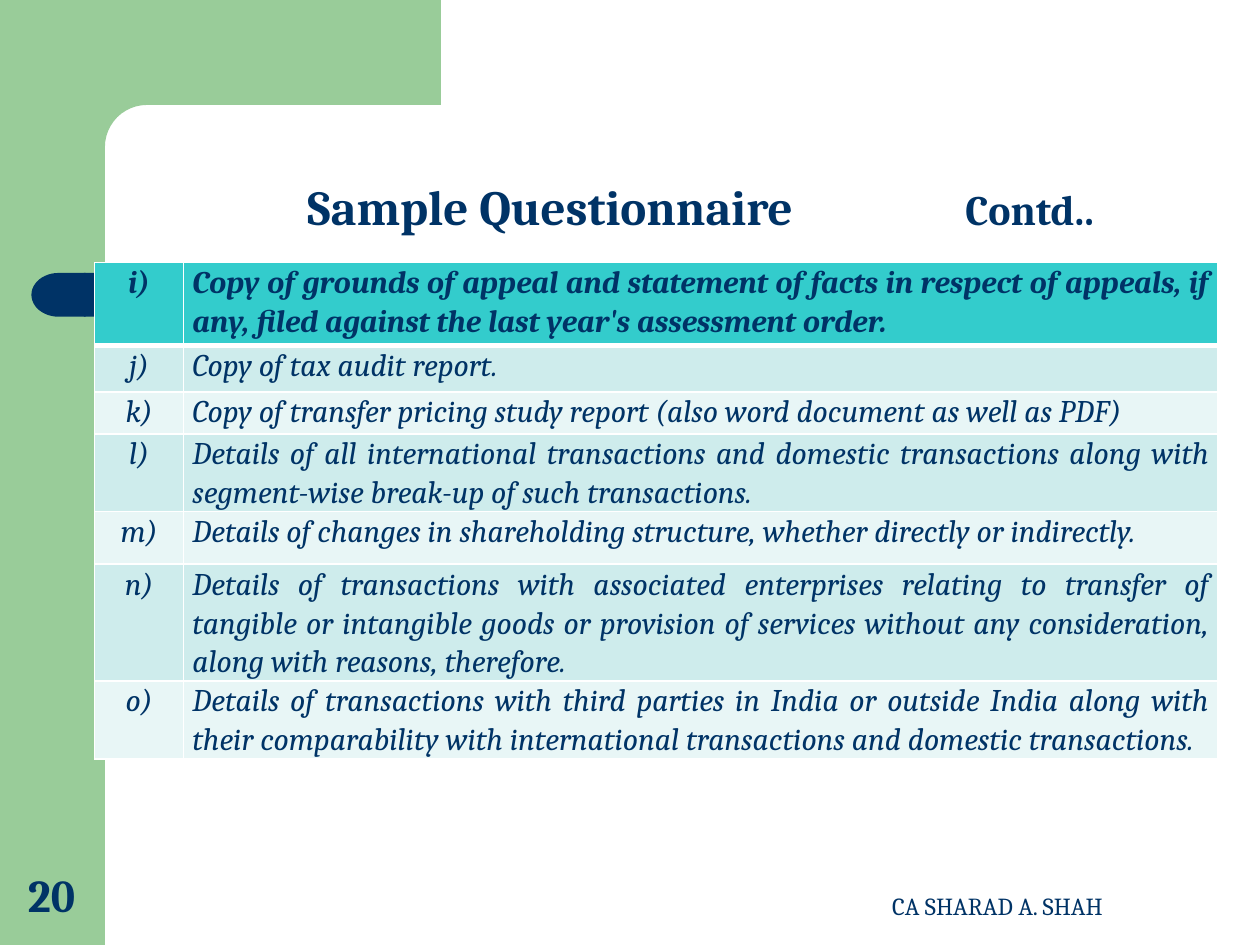
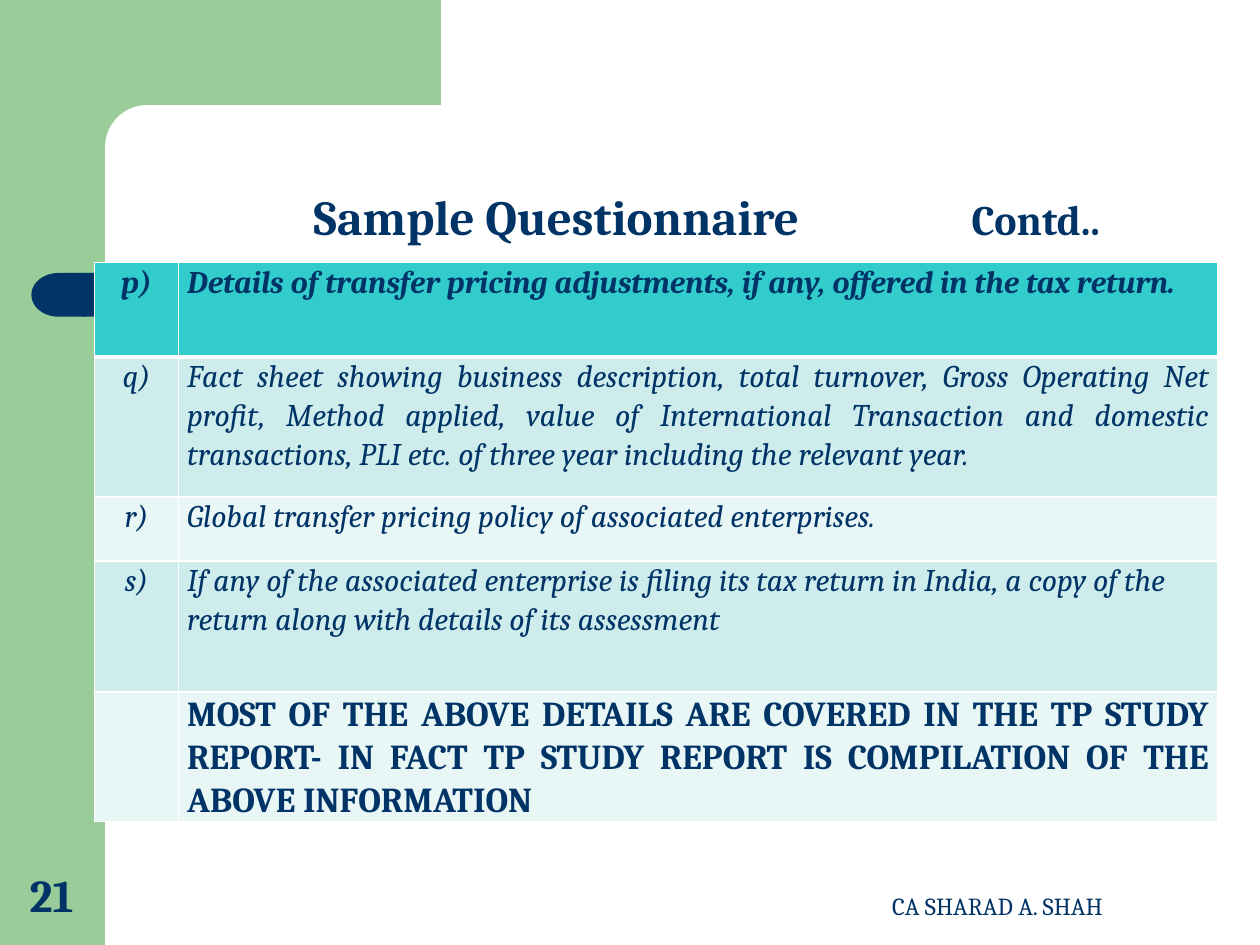
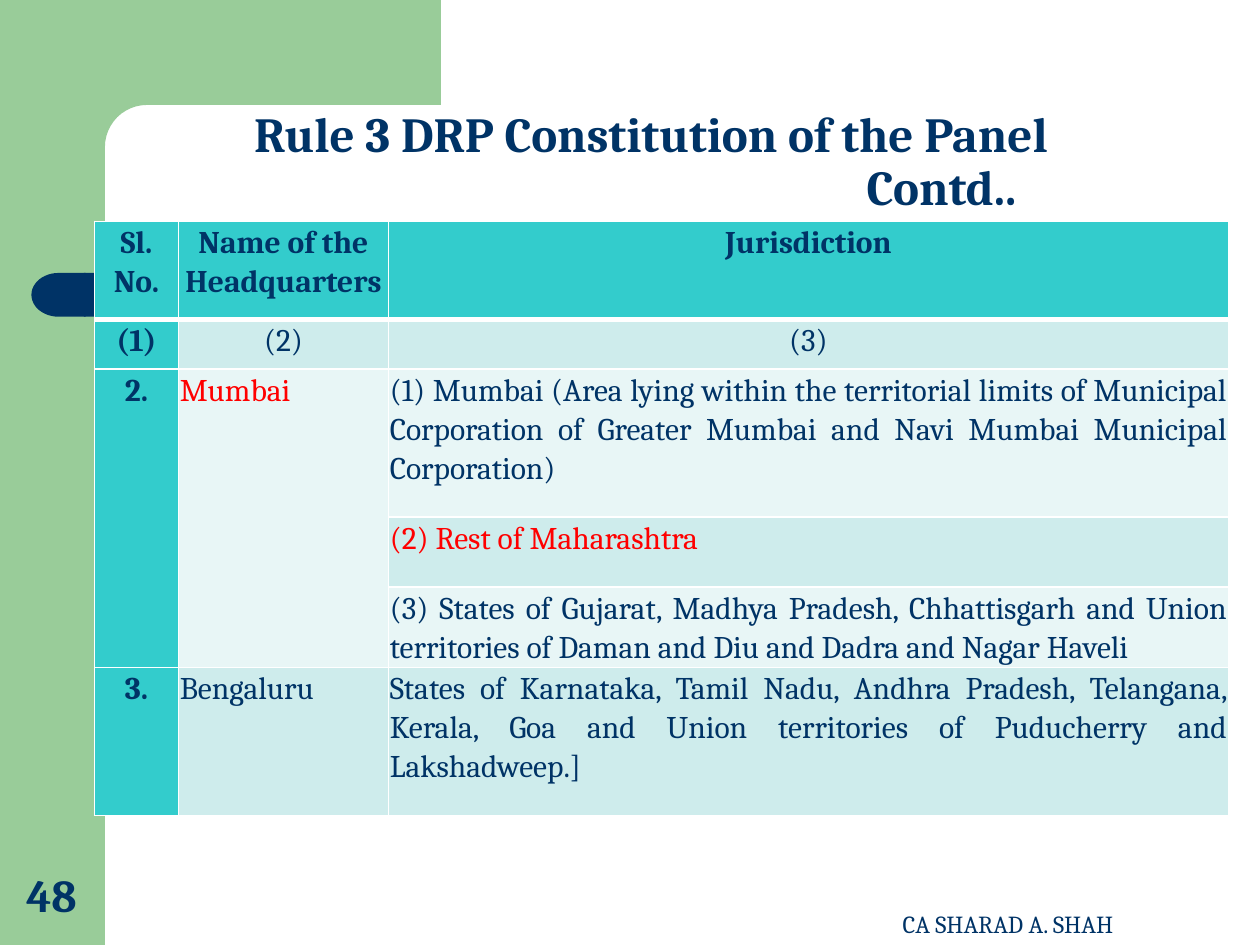
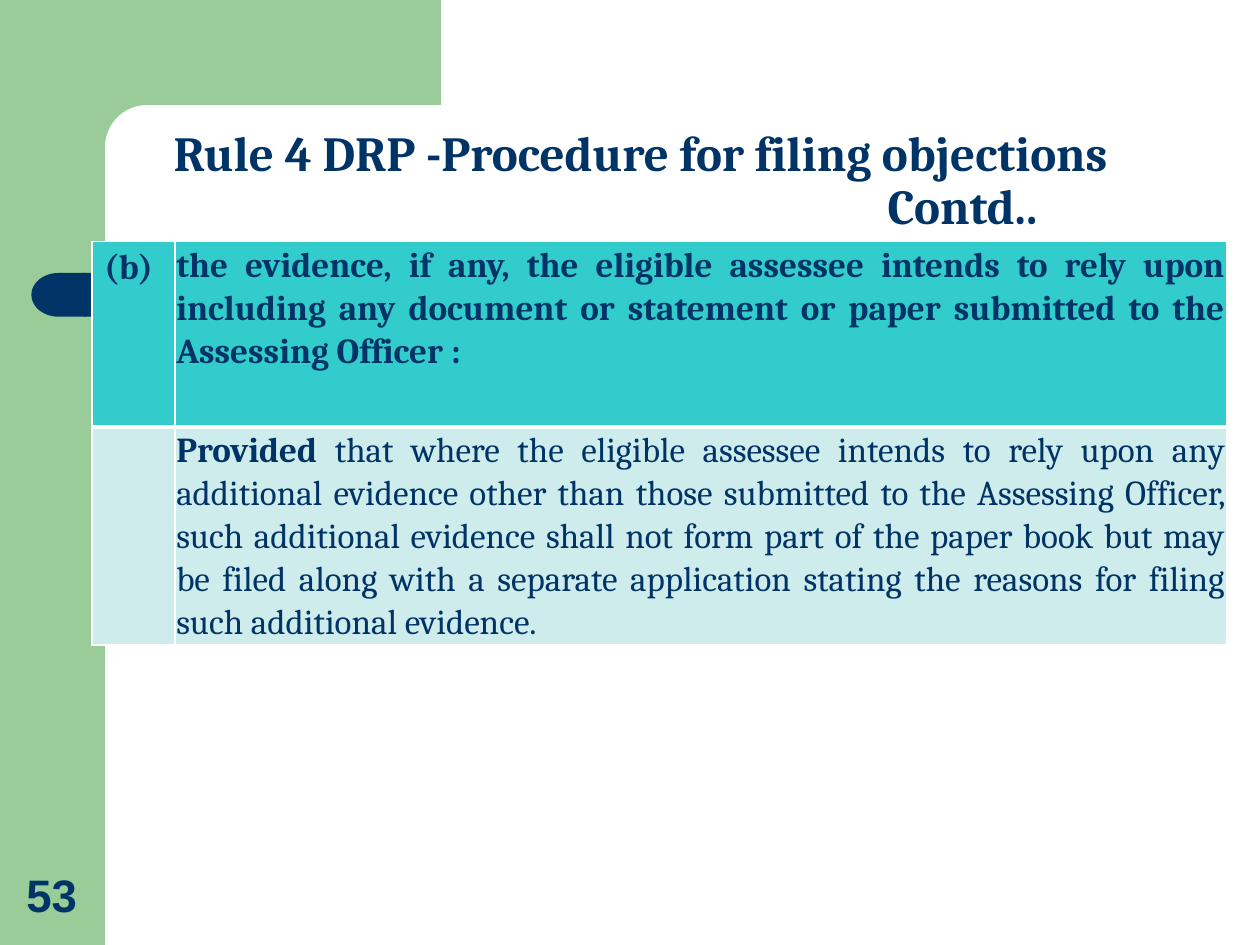
import dataclasses
import math
import typing

import lxml.etree
import pptx
import pptx.dml.color
import pptx.enum.shapes
import pptx.enum.text
import pptx.oxml
import pptx.oxml.ns
import pptx.util

Pt = pptx.util.Pt
RGBColor = pptx.dml.color.RGBColor
ALIGN = pptx.enum.text.PP_ALIGN
ANCHOR = pptx.enum.text.MSO_ANCHOR
SHAPE = pptx.enum.shapes.MSO_SHAPE
qn = pptx.oxml.ns.qn

# Shared style
NAVY = RGBColor(0x00, 0x33, 0x66)
GREEN = RGBColor(0x99, 0xCC, 0x99)
TEAL = RGBColor(0x33, 0xCC, 0xCC)
BAND_DARK = RGBColor(0xCE, 0xEC, 0xEC)
BAND_LIGHT = RGBColor(0xE8, 0xF6, 0xF6)
RED = RGBColor(0xFF, 0x00, 0x00)
WHITE = RGBColor(0xFF, 0xFF, 0xFF)
FONT = "Cambria"
FOOTER = "CA SHARAD A. SHAH"


@dataclasses.dataclass(frozen=True)
class Span:
    text: str
    size: float = 28
    bold: bool = True
    italic: bool = False
    color: RGBColor = NAVY
    font: str = FONT


@dataclasses.dataclass(frozen=True)
class TitleLine:
    """A centred line, or a left-aligned one when it has tab stops."""
    spans: tuple[Span, ...]
    stops: tuple[float, ...] = ()


@dataclasses.dataclass(frozen=True)
class Entry:
    """A table cell; settings left at None follow the table's rules."""
    text: str
    lead: str = ""
    align: typing.Optional[ALIGN] = None
    size: typing.Optional[float] = None
    bold: typing.Optional[bool] = None
    italic: typing.Optional[bool] = None
    color: RGBColor = NAVY
    plain: bool = False


@dataclasses.dataclass(frozen=True)
class Grid:
    left: float
    top: float
    columns: tuple[float, ...]
    heights: tuple[float, ...]
    rows: tuple[tuple[typing.Union[str, Entry], ...], ...]
    size: float = 18
    italic: bool = False
    margins: tuple[float, float] = (0.75, 0.75)
    space_after: float = 8
    label_column: bool = False
    merges: tuple[tuple[int, int, int, int], ...] = ()


@dataclasses.dataclass(frozen=True)
class Page:
    number: str
    title_box: tuple[float, float, float, float]
    title: tuple[TitleLine, ...]
    grid: Grid
    footer_at: typing.Optional[tuple[float, float]] = (456, 492)
    number_font: str = FONT


# Text
def write_spans(para, spans: typing.Sequence[Span]) -> None:
    para.text = spans[0].text
    for span in spans[1:]:
        para.add_run().text = span.text
    for run, span in zip(para.runs, spans):
        run.font.name = span.font
        run.font.size = Pt(span.size)
        run.font.bold = span.bold
        run.font.italic = span.italic
        run.font.color.rgb = span.color


def set_tab_stops(para, stops: typing.Sequence[float]) -> None:
    tabs = lxml.etree.SubElement(para._p.get_or_add_pPr(), qn("a:tabLst"))
    for stop in stops:
        lxml.etree.SubElement(tabs, qn("a:tab"), pos=str(Pt(stop)), algn="l")


def add_label(slide, left: float, top: float, width: float, height: float, span: Span) -> None:
    box = slide.shapes.add_textbox(Pt(left), Pt(top), Pt(width), Pt(height))
    frame = box.text_frame
    frame.word_wrap = True
    frame.vertical_anchor = ANCHOR.BOTTOM
    write_spans(frame.paragraphs[0], [span])
    frame.paragraphs[0].alignment = ALIGN.CENTER


def set_title(slide, box: tuple[float, float, float, float], lines: typing.Sequence[TitleLine]) -> None:
    title = slide.shapes.title
    title.left, title.top, title.width, title.height = map(Pt, box)
    title.element.spPr.append(pptx.oxml.parse_xml(
        f'<a:prstGeom {pptx.oxml.ns.nsdecls("a")} prst="roundRect"><a:avLst>'
        '<a:gd name="adj" fmla="val 21700"/></a:avLst></a:prstGeom>'))
    frame = title.text_frame
    frame.vertical_anchor = ANCHOR.BOTTOM
    frame.word_wrap = True
    frame.auto_size = pptx.enum.text.MSO_AUTO_SIZE.NONE
    for index, line in enumerate(lines):
        para = frame.add_paragraph() if index else frame.paragraphs[0]
        write_spans(para, line.spans)
        para.line_spacing = 0.9
        para.alignment = ALIGN.LEFT if line.stops else ALIGN.CENTER
        if line.stops:
            set_tab_stops(para, line.stops)


# Backdrop, held by the slide master
def add_backdrop(deck, slide) -> None:
    shapes = slide.shapes
    side = shapes.add_shape(SHAPE.RECTANGLE, 0, 0, Pt(60), Pt(540))

    center, radius, steps = 84, 24, 12
    angles = [math.pi / 2 * step / steps for step in range(steps + 1)]
    arc = [(center - radius * math.sin(angle), center - radius * math.cos(angle))
           for angle in angles]
    outline = [(252, 60), *arc, (60, 92), (36, 92), (36, 0)]
    builder = shapes.build_freeform(Pt(252), 0, scale=1.0)
    builder.add_line_segments([(Pt(x), Pt(y)) for x, y in outline], close=True)
    corner = builder.convert_to_shape()

    bar = shapes.add_shape(SHAPE.ROUNDED_RECTANGLE, Pt(48), Pt(156), Pt(552), Pt(25))
    bar.adjustments[0] = 0
    cap = shapes.add_shape(SHAPE.FLOWCHART_DELAY, Pt(18), Pt(156), Pt(31), Pt(25))
    cap.element.spPr.xfrm.set("flipH", "1")

    master_tree = deck.slide_master.shapes.element
    parts = ((side, GREEN), (corner, GREEN), (bar, NAVY), (cap, NAVY))
    for index, (shape, color) in enumerate(parts):
        shape.shadow.inherit = False
        shape.fill.solid()
        shape.fill.fore_color.rgb = color
        shape.line.fill.background()
        shape.element.nvSpPr.cNvPr.set("id", str(20 + index))
        master_tree.insert(2 + index, shape.element)


# Tables
def set_borders(cell, header: bool) -> None:
    widths = {"a:lnL": 1, "a:lnR": 1}
    if header:
        widths["a:lnT"] = 1
    widths["a:lnB"] = 3 if header else 1
    properties = cell._tc.get_or_add_tcPr()
    for index, (tag, width) in enumerate(widths.items()):
        line = lxml.etree.Element(qn(tag), w=str(Pt(width)))
        fill = lxml.etree.SubElement(line, qn("a:solidFill"))
        lxml.etree.SubElement(fill, qn("a:srgbClr"), val=str(WHITE))
        properties.insert(index, line)


def fill_cell(cell, entry: Entry, grid: Grid, row: int, column: int) -> None:
    header = row == 0
    strong = header or (grid.label_column and column == 0)
    cell.fill.solid()
    cell.fill.fore_color.rgb = TEAL if strong else (BAND_DARK if row % 2 else BAND_LIGHT)
    set_borders(cell, header)
    if not entry.text:
        return
    bold = strong if entry.bold is None else entry.bold
    body = Span(entry.text, entry.size or grid.size, bold,
                grid.italic if entry.italic is None else entry.italic, entry.color)
    lead = [dataclasses.replace(body, text=entry.lead, bold=True)] if entry.lead else []
    para = cell.text_frame.paragraphs[0]
    write_spans(para, [*lead, body])
    para.alignment = entry.align or (ALIGN.JUSTIFY if column else ALIGN.CENTER)
    if not entry.plain:
        para.line_spacing = 1.07
        para.space_after = Pt(grid.space_after)
        across, down = map(Pt, grid.margins)
        cell.margin_left = cell.margin_right = across
        cell.margin_top = cell.margin_bottom = down


def add_grid(slide, grid: Grid) -> None:
    frame = slide.shapes.add_table(
        len(grid.heights), len(grid.columns), Pt(grid.left), Pt(grid.top),
        Pt(sum(grid.columns)), Pt(sum(grid.heights)))
    table = frame.table
    for column, width in zip(table.columns, grid.columns):
        column.width = Pt(width)
    for row, height in zip(table.rows, grid.heights):
        row.height = Pt(height)
    for row, entries in enumerate(grid.rows):
        for column, value in enumerate(entries):
            entry = value if isinstance(value, Entry) else Entry(value)
            fill_cell(table.cell(row, column), entry, grid, row, column)
    for top, left, bottom, right in grid.merges:
        table.cell(top, left).merge(table.cell(bottom, right))


def questionnaire_title(first: float, second: float) -> tuple[TitleLine, ...]:
    return (TitleLine((Span("\tSample Questionnaire\t"), Span("Contd..", 24)),
                      (first, second)),)


def continued_title(text: str, stop: float) -> tuple[TitleLine, ...]:
    return TitleLine((Span(text),)), TitleLine((Span("\tContd.."),), (stop,))


def centered(text: str) -> Entry:
    return Entry(text, align=ALIGN.CENTER)


# Content
PAGES = (
    Page("20", (60.5, 58.5, 624, 80), questionnaire_title(108, 484), Grid(
        54, 150, (51, 591), (47.5, 26.5, 24, 27, 30, 30, 30), (
            ("i)", "Copy of grounds of appeal and statement of facts in respect of appeals, "
                   "if any, filed against the last year's assessment order."),
            ("j)", "Copy of tax audit report."),
            ("k)", "Copy of transfer pricing study report (also word document as well as PDF)"),
            ("l)", "Details of all international transactions and domestic transactions along "
                   "with segment-wise break-up of such transactions."),
            ("m)", "Details of changes in shareholding structure, whether directly or indirectly."),
            ("n)", "Details of transactions with associated enterprises relating to transfer of "
                   "tangible or intangible goods or provision of services without any "
                   "consideration, along with reasons, therefore."),
            ("o)", "Details of transactions with third parties in India or outside India along "
                   "with their comparability with international transactions and domestic "
                   "transactions."),
        ), italic=True, margins=(5, 0))),
    Page("21", (60, 60, 624, 84), questionnaire_title(112, 488), Grid(
        54, 150, (48, 594), (54, 80, 36.5, 75, 24.5), (
            ("p)", "Details of transfer pricing adjustments, if any, offered in the tax return."),
            ("q)", "Fact sheet showing business description, total turnover, Gross Operating Net "
                   "profit, Method applied, value of International Transaction and domestic "
                   "transactions, PLI etc. of three year including the relevant year."),
            ("r)", "Global transfer pricing policy of associated enterprises."),
            ("s)", Entry("If any of the associated enterprise is filing its tax return in India, "
                         "a copy of the return along with details of its assessment",
                         align=ALIGN.LEFT)),
            ("", Entry("MOST OF THE ABOVE DETAILS ARE COVERED IN THE TP STUDY REPORT- IN FACT TP "
                       "STUDY REPORT IS COMPILATION OF THE ABOVE INFORMATION",
                       size=20, bold=True, italic=False)),
        ), italic=True, margins=(5, 0))),
    Page("48", (60, 60, 624, 67), continued_title("Rule 3 DRP Constitution of the Panel", 428), Grid(
        54, 126.5, (48, 120, 480), (56, 28.5, 84.5, 40, 45.5, 84.5), (
            ("Sl. No.", centered("Name of the Headquarters"), centered("Jurisdiction")),
            ("(1)", centered("(2)"), centered("(3)")),
            ("2.", Entry("Mumbai", color=RED),
             "(1) Mumbai (Area lying within the territorial limits of Municipal Corporation of "
             "Greater Mumbai and Navi Mumbai Municipal Corporation)"),
            ("", "", Entry("(2) Rest of Maharashtra", color=RED)),
            ("", "", "(3) States of Gujarat, Madhya Pradesh, Chhattisgarh and Union territories "
                     "of Daman and Diu and Dadra and Nagar Haveli"),
            ("3.", "Bengaluru",
             "States of Karnataka, Tamil Nadu, Andhra Pradesh, Telangana, Kerala, Goa and Union "
             "territories of Puducherry and Lakshadweep.]"),
        ), space_after=4, label_column=True, merges=((2, 0, 4, 0), (2, 1, 4, 1))),
        footer_at=(462, 502.5)),
    Page("53", (54, 66, 624, 72), continued_title("Rule 4 DRP -Procedure for filing objections", 446), Grid(
        52.5, 138, (47.5, 601), (106, 30), (
            (Entry("(b)", align=ALIGN.LEFT, plain=True),
             "the evidence, if any, the eligible assessee intends to rely upon including any "
             "document or statement or paper submitted to the Assessing Officer :"),
            ("", Entry(" that where the eligible assessee intends to rely upon any additional "
                       "evidence other than those submitted to the Assessing Officer, such "
                       "additional evidence shall not form part of the paper book but may be "
                       "filed along with a separate application stating the reasons for filing "
                       "such additional evidence.", lead="Provided")),
        ), size=20), footer_at=None, number_font="Arial"),
)


def main() -> None:
    deck = pptx.Presentation()
    deck.slide_width, deck.slide_height = Pt(720), Pt(540)
    title_only = deck.slide_layouts[5]
    for index, page in enumerate(PAGES):
        slide = deck.slides.add_slide(title_only)
        if index == 0:
            add_backdrop(deck, slide)
        set_title(slide, page.title_box, page.title)
        add_grid(slide, page.grid)
        if page.footer_at:
            add_label(slide, *page.footer_at, 228, 37.5, Span(FOOTER, 14, bold=False))
        add_label(slide, 6.5, 492, 46, 38, Span(page.number, 26, font=page.number_font))
    deck.save("out.pptx")


if __name__ == "__main__":
    main()
